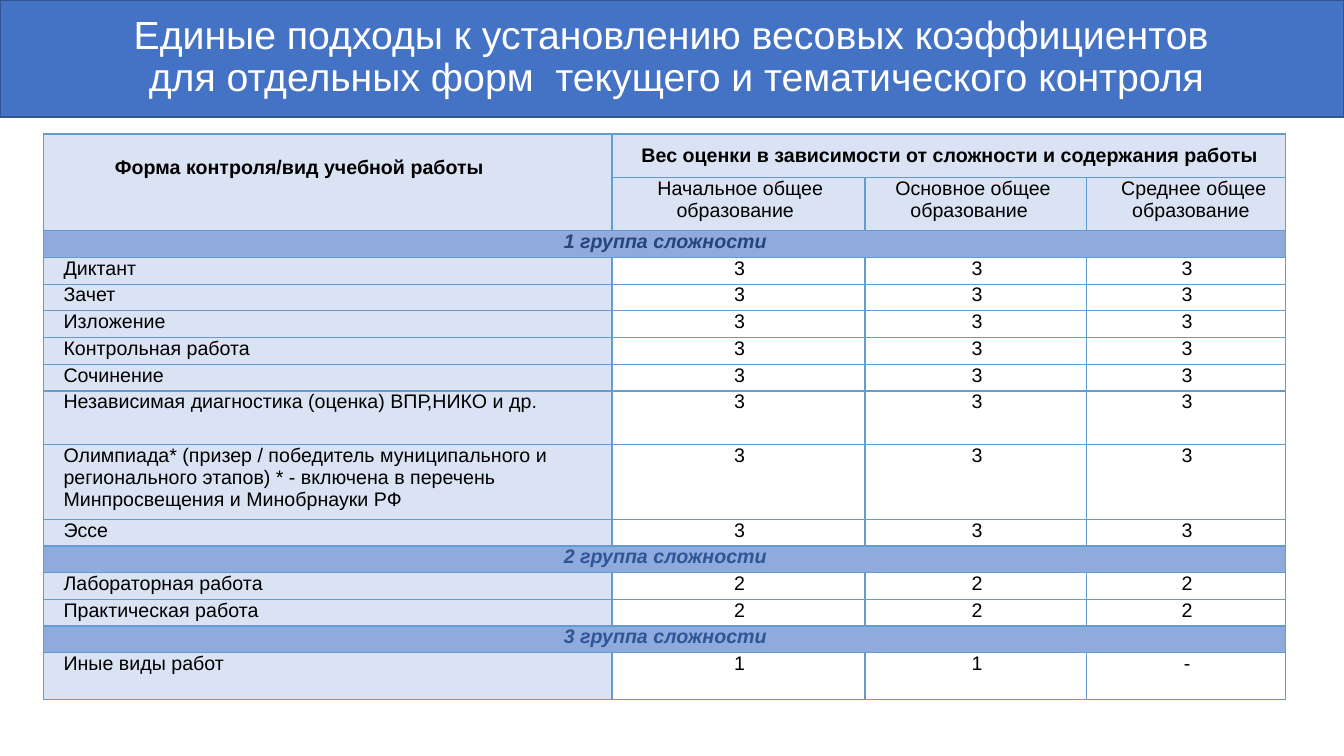
from dataclasses import dataclass

from lxml import etree
from pptx import Presentation
from pptx import util as u
from pptx.dml.color import RGBColor
from pptx.enum import shapes, text
from pptx.oxml import ns

BANNER_BLUE = RGBColor(0x44, 0x72, 0xC4)
BANNER_LINE = RGBColor(0x32, 0x54, 0x91)
GRID_BLUE = RGBColor(0x61, 0x9D, 0xD1)
PALE_BLUE = RGBColor(0xDA, 0xE3, 0xF3)
GROUP_BLUE = RGBColor(0x8F, 0xAA, 0xDC)
DARK_BLUE = RGBColor(0x27, 0x45, 0x7B)
MID_BLUE = RGBColor(0x2F, 0x55, 0x97)
WHITE = RGBColor(0xFF, 0xFF, 0xFF)
BLACK = RGBColor(0, 0, 0)

FONT = "Arial"
SLIDE_WIDTH, SLIDE_HEIGHT = u.Inches(13.33), u.Inches(7.5)
BANNER_HEIGHT = u.Inches(1.16)
TABLE_LEFT, TABLE_TOP = u.Inches(0.43), u.Inches(1.33)
TABLE_WIDTH, TABLE_HEIGHT = u.Inches(12.32), u.Inches(5.61)
COLUMN_SHARES = [5.64, 2.51, 2.2, 1.97]
HEADER_LINES = [1.62, 2]
LEFT, CENTER = text.PP_ALIGN.LEFT, text.PP_ALIGN.CENTER


@dataclass
class Level:
    name: str
    margin: float
    hanging: float


@dataclass
class Group:
    name: str
    color: RGBColor


@dataclass
class Work:
    name: str
    weights: str
    lines: float = 1


LEVELS = [
    Level("Начальное общее образование", 0.64, 0.19),
    Level("Основное общее образование", 0.45, 0.15),
    Level("Среднее общее образование", 0.45, 0.11),
]
ROWS = [
    Group("1 группа сложности", DARK_BLUE),
    Work("Диктант", "333"),
    Work("Зачет", "333"),
    Work("Изложение", "333"),
    Work("Контрольная работа", "333"),
    Work("Сочинение", "333"),
    Work("Независимая диагностика (оценка) ВПР,НИКО и др.", "333", 2),
    Work("Олимпиада* (призер / победитель муниципального и регионального этапов) "
         "* - включена в перечень\nМинпросвещения и Минобрнауки РФ", "333", 2.8),
    Work("Эссе", "333"),
    Group("2 группа сложности", MID_BLUE),
    Work("Лабораторная работа", "222"),
    Work("Практическая работа", "222"),
    Group("3 группа сложности", MID_BLUE),
    Work("Иные виды работ", "11-", 1.74),
]


def draw_borders(cell) -> None:
    properties = cell._tc.get_or_add_tcPr()
    for position, side in enumerate(("lnL", "lnR", "lnT", "lnB")):
        line = etree.Element(ns.qn(f"a:{side}"), w=str(u.Pt(1)))
        fill = etree.SubElement(line, ns.qn("a:solidFill"))
        etree.SubElement(fill, ns.qn("a:srgbClr"), val=str(GRID_BLUE))
        properties.insert(position, line)


def write_cell(cell, content: str, align=LEFT, margin: float = 0.02, top: float = 0,
               color: RGBColor = BLACK, bold: bool = False, italic: bool = False) -> None:
    cell.text_frame.text = content
    cell.margin_left, cell.margin_top = u.Inches(margin), u.Inches(top)
    for paragraph in cell.text_frame.paragraphs:
        paragraph.alignment = align
        for run in paragraph.runs:
            font = run.font
            font.name, font.size, font.color.rgb = FONT, u.Pt(14), color
            font.bold, font.italic = bold, italic


def fill_cell(cell, color: RGBColor) -> None:
    cell.fill.solid()
    cell.fill.fore_color.rgb = color


def add_grid(slide):
    lines = HEADER_LINES + [getattr(row, "lines", 1) for row in ROWS]
    table = slide.shapes.add_table(len(lines), len(COLUMN_SHARES), TABLE_LEFT, TABLE_TOP,
                                   TABLE_WIDTH, TABLE_HEIGHT).table
    table.first_row = table.horz_banding = False
    for column, share in zip(table.columns, COLUMN_SHARES):
        column.width = int(TABLE_WIDTH * share / sum(COLUMN_SHARES))
    for row, count in zip(table.rows, lines):
        row.height = int(TABLE_HEIGHT * count / sum(lines))
    for cell in table.iter_cells():
        cell.margin_left = cell.margin_right = cell.margin_top = cell.margin_bottom = 0
        cell.fill.background()
        draw_borders(cell)
    return table


def write_header(table) -> None:
    for row in range(len(HEADER_LINES)):
        for column in range(len(COLUMN_SHARES)):
            fill_cell(table.cell(row, column), PALE_BLUE)
    table.cell(0, 0).merge(table.cell(1, 0))
    table.cell(0, 1).merge(table.cell(0, 3))
    write_cell(table.cell(0, 0), "Форма контроля/вид учебной работы",
               margin=0.71, top=0.22, bold=True)
    weight = table.cell(0, 1)
    write_cell(weight, "Вес оценки в зависимости от сложности и содержания работы",
               CENTER, bold=True)
    weight.text_frame.paragraphs[0].line_spacing = 1.5
    for column, level in enumerate(LEVELS, 1):
        cell = table.cell(1, column)
        write_cell(cell, level.name, margin=0)
        properties = cell.text_frame.paragraphs[0]._p.get_or_add_pPr()
        properties.set("marL", str(u.Inches(level.margin)))
        properties.set("indent", str(-u.Inches(level.hanging)))


def write_rows(table) -> None:
    for index, row in enumerate(ROWS, len(HEADER_LINES)):
        first = table.cell(index, 0)
        if isinstance(row, Group):
            first.merge(table.cell(index, 3))
            fill_cell(first, GROUP_BLUE)
            write_cell(first, row.name, CENTER, color=row.color, bold=True, italic=True)
            continue
        fill_cell(first, PALE_BLUE)
        write_cell(first, row.name, margin=0.2)
        for column, weight in enumerate(row.weights, 1):
            write_cell(table.cell(index, column), weight, CENTER)


def add_banner(slide) -> None:
    banner = slide.shapes.add_shape(shapes.MSO_SHAPE.RECTANGLE, 0, 0, SLIDE_WIDTH, BANNER_HEIGHT)
    banner.shadow.inherit = False
    banner.fill.solid()
    banner.fill.fore_color.rgb = BANNER_BLUE
    banner.line.color.rgb = BANNER_LINE
    banner.line.width = u.Pt(1)

    title = slide.shapes.title
    banner.element.addnext(title.element)
    title.left, title.top = u.Inches(0.18), u.Inches(-0.01)
    title.width, title.height = u.Inches(12.95), u.Inches(1.17)
    frame = title.text_frame
    frame.text = ("Единые подходы к установлению весовых коэффициентов\v"
                  " для отдельных форм  текущего и тематического контроля")
    frame.word_wrap = True
    frame.auto_size = text.MSO_AUTO_SIZE.NONE
    frame.vertical_anchor = text.MSO_ANCHOR.MIDDLE
    paragraph = frame.paragraphs[0]
    paragraph.alignment = CENTER
    paragraph.line_spacing = 0.9
    for run in paragraph.runs:
        run.font.name, run.font.size, run.font.color.rgb = FONT, u.Pt(28), WHITE


def main() -> None:
    presentation = Presentation()
    presentation.slide_width, presentation.slide_height = SLIDE_WIDTH, SLIDE_HEIGHT
    slide = presentation.slides.add_slide(presentation.slide_layouts[5])
    table = add_grid(slide)
    write_header(table)
    write_rows(table)
    add_banner(slide)
    presentation.save("out.pptx")


if __name__ == "__main__":
    main()
